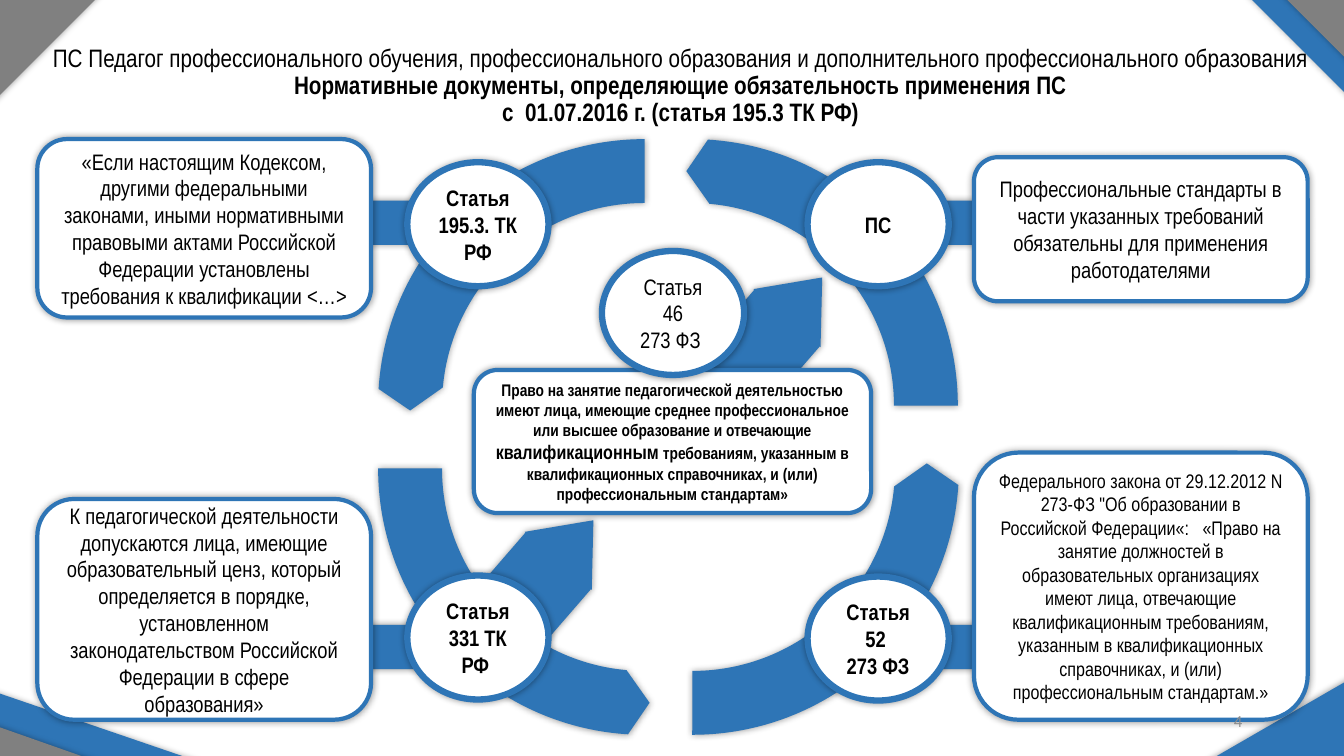
"""Builds the slide on the legal acts that make professional standards mandatory."""
from dataclasses import dataclass

from lxml import etree
from pptx import Presentation
from pptx.dml.color import RGBColor
from pptx.enum.shapes import MSO_SHAPE
from pptx.enum.text import MSO_ANCHOR, PP_ALIGN
from pptx.oxml.ns import qn
from pptx.util import Inches, Pt

RECT = MSO_SHAPE.RECTANGLE
ROUND = MSO_SHAPE.ROUNDED_RECTANGLE
OVAL = MSO_SHAPE.OVAL
ARROW = MSO_SHAPE.RIGHT_ARROW
ARC = MSO_SHAPE.LEFT_CIRCULAR_ARROW
CENTER, RIGHT = PP_ALIGN.CENTER, PP_ALIGN.RIGHT
MIDDLE, BOTTOM = MSO_ANCHOR.MIDDLE, MSO_ANCHOR.BOTTOM

BLUE, GRAY, WHITE, BLACK, PALE = "2E75B6", "808080", "FFFFFF", "000000", "8C8C8C"
NARROW = "Arial Narrow"
ARROW_ADJ = (0.975, 0.606)
ARC_ADJ = (0.12, 3.275, 2.503, 54.052, 0.06)
ARC_SIZE = 5.28


@dataclass
class Run:
    text: str
    size: float = 16
    bold: bool = False
    font: str = NARROW
    color: str = BLACK


@dataclass
class Solid:
    kind: MSO_SHAPE
    box: tuple
    rotation: float = 0
    fill: str = BLUE
    adj: tuple = ()


@dataclass
class Card:
    kind: MSO_SHAPE
    box: tuple
    paragraphs: list


SOLIDS = [
    Solid(ARROW, (6.98, 2.85, 1.42, 0.88), 310.9, adj=ARROW_ADJ),
    Solid(ARROW, (4.86, 5.19, 1.24, 0.88), 310.9, adj=ARROW_ADJ),
    *[Solid(RECT, (x, y, 0.57, 0.44)) for x in (3.65, 9.26) for y in (1.99, 6.2)],
    Solid(RECT, (10.66, -0.89, 6.06, 1.79), 45),
    Solid(RECT, (-1.72, 7.45, 6.62, 0.84), 18.9),
    Solid(RECT, (-0.67, -0.22, 1.78, 0.78), 315, GRAY),
    Solid(RECT, (11.94, 7.13, 1.83, 1.09), 330),
    Solid(RECT, (10.61, -0.26, 6.62, 1.17), 45, GRAY),
    Solid(RECT, (-2.15, 7.66, 6.62, 1.17), 19.4, GRAY),
]
ARCS = [
    Solid(ARC, (x, y, ARC_SIZE, ARC_SIZE), rotation, adj=ARC_ADJ)
    for x, y, rotation in ((4.23, 2.01, 0), (4.22, 1.38, 270), (3.75, 1.38, 180), (3.75, 2.01, 90))
]
TITLE = [
    [Run("ПС Педагог профессионального обучения, профессионального образования "
         "и дополнительного профессионального образования", 18)],
    [Run("Нормативные документы, определяющие обязательность применения ПС", 18, True)],
    [Run("с  01.07.2016 г. (статья 195.3 ТК РФ)", 18, True)],
]
CARDS = [
    Card(ROUND, (0.37, 1.38, 3.31, 1.77), [[Run(
        "«Если настоящим Кодексом, другими федеральными законами, иными нормативными "
        "правовыми актами Российской Федерации установлены требования к квалификации <…>")]]),
    Card(ROUND, (9.66, 1.56, 3.31, 1.43), [[Run(
        "Профессиональные стандарты в части указанных требований обязательны "
        "для применения работодателями")]]),
    Card(OVAL, (4.04, 1.61, 1.4, 1.23), [[Run("Статья 195.3. ТК РФ", bold=True)]]),
    Card(OVAL, (4.04, 5.71, 1.4, 1.23), [[Run("Статья 331 ТК РФ ", bold=True)]]),
    Card(OVAL, (8.01, 5.72, 1.4, 1.23),
         [[Run("Статья 52 ", bold=True)], [Run("273 ФЗ", bold=True)]]),
    Card(OVAL, (8.01, 1.61, 1.4, 1.23), [[Run("ПС", bold=True)]]),
    Card(ROUND, (0.37, 4.95, 3.31, 2.19), [[Run(
        "К педагогической деятельности допускаются лица, имеющие образовательный ценз, "
        "который определяется в порядке, установленном законодательством "
        "Российской Федерации в сфере образования»")]]),
    Card(ROUND, (9.66, 4.49, 3.31, 2.65), [[Run(
        "Федерального закона от 29.12.2012 N 273-ФЗ \"Об образовании в Российской "
        "Федерации«:   «Право на занятие должностей в образовательных организациях "
        "имеют лица, отвечающие квалификационным требованиям, указанным в "
        "квалификационных справочниках, и (или) профессиональным стандартам.»", 14)]]),
    Card(ROUND, (4.7, 3.67, 3.94, 1.42), [[
        Run("Право на занятие педагогической деятельностью имеют лица, имеющие среднее "
            "профессиональное или высшее образование и отвечающие ", 12, True),
        Run("квалификационным", 14, True),
        Run(" требованиям, указанным в квалификационных справочниках, и (или) "
            "профессиональным стандартам»", 12, True)]]),
    Card(OVAL, (5.97, 2.49, 1.41, 1.23), [[Run("Статья 46")], [Run("273 ФЗ ")]]),
]


def rgb(color: str) -> RGBColor:
    return RGBColor.from_string(color)


def add_glow_shadow(sp) -> None:
    effects = etree.SubElement(sp._element.spPr, qn("a:effectLst"))
    shadow = etree.SubElement(effects, qn("a:outerShdw"), blurRad=str(Pt(5)), dist="0",
                              dir="0", algn="ctr", rotWithShape="0")
    color = etree.SubElement(shadow, qn("a:srgbClr"), val=BLACK)
    etree.SubElement(color, qn("a:alpha"), val="40000")


def write(tf, paragraphs: list, align=CENTER, anchor=MIDDLE, spacing: float = 1.0) -> None:
    for name, value in {"word_wrap": True, "vertical_anchor": anchor}.items():
        setattr(tf, name, value)
    for i, runs in enumerate(paragraphs):
        p = tf.add_paragraph() if i else tf.paragraphs[0]
        for name, value in {"alignment": align, "line_spacing": spacing}.items():
            setattr(p, name, value)
        for run in runs:
            r = p.add_run()
            r.text = run.text
            for name, value in {"size": Pt(run.size), "bold": run.bold, "name": run.font}.items():
                setattr(r.font, name, value)
            r.font.color.rgb = rgb(run.color)


def add_solid(s, solid: Solid):
    sp = s.shapes.add_shape(solid.kind, *map(Inches, solid.box))
    sp.rotation = solid.rotation
    for i, value in enumerate(solid.adj):
        sp.adjustments[i] = value
    sp.fill.solid()
    sp.fill.fore_color.rgb = rgb(solid.fill)
    sp.line.fill.background()
    add_glow_shadow(sp)
    return sp


def add_card(s, card: Card) -> None:
    sp = add_solid(s, Solid(card.kind, card.box, fill=WHITE))
    sp.line.color.rgb = rgb(BLUE)
    sp.line.width = Pt(4.5 if card.kind == OVAL else 3)
    write(sp.text_frame, card.paragraphs)


def add_text(s, box: tuple, paragraphs: list, **layout) -> None:
    write(s.shapes.add_textbox(*map(Inches, box)).text_frame, paragraphs, **layout)


def main() -> None:
    prs = Presentation()
    prs.slide_width, prs.slide_height = Inches(13.33), Inches(7.5)
    s = prs.slides.add_slide(prs.slide_layouts[6])
    for solid in SOLIDS:
        add_solid(s, solid)
    add_text(s, (0.37, 0.56, 12.76, 0.75), TITLE, anchor=BOTTOM, spacing=0.9)
    for arc in ARCS:
        add_solid(s, arc)
    for card in CARDS:
        add_card(s, card)
    add_text(s, (9.42, 6.95, 3, 0.4), [[Run("4", 12, font="Calibri", color=PALE)]], align=RIGHT)
    prs.save("out.pptx")


if __name__ == "__main__":
    main()
